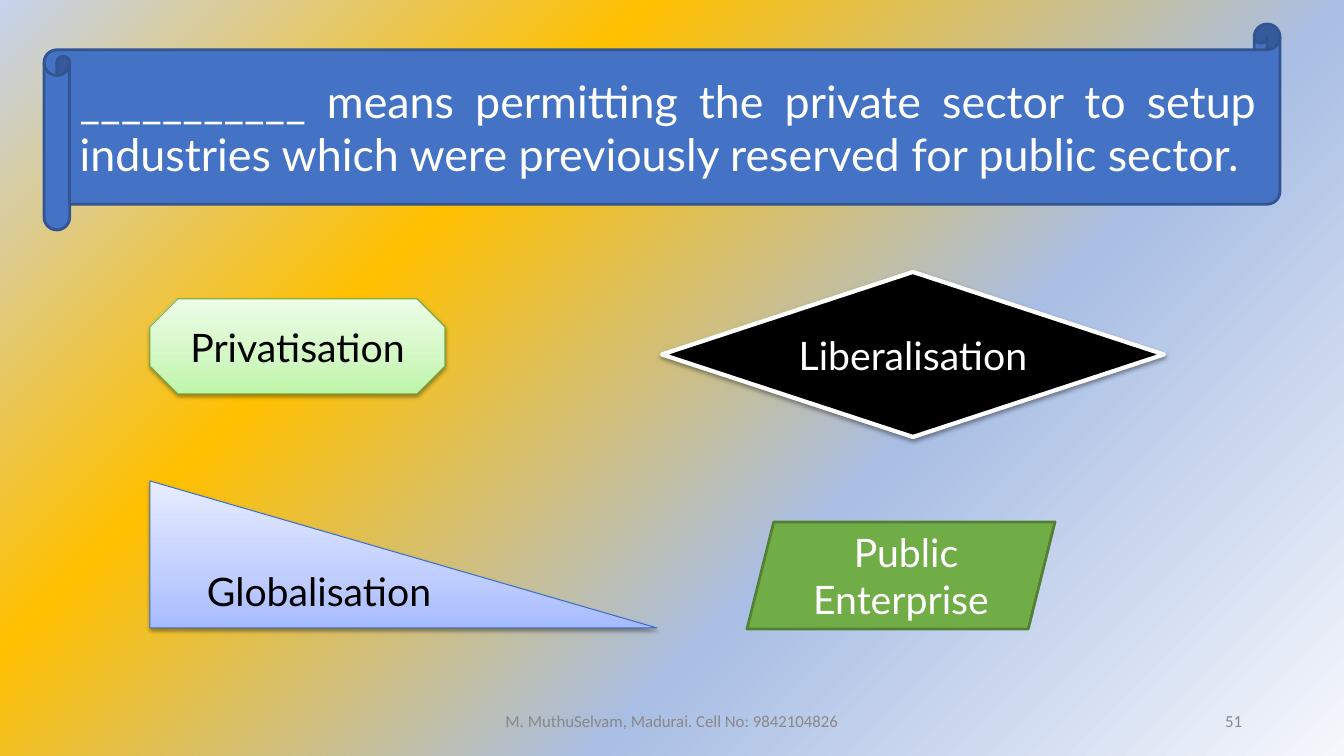
from dataclasses import dataclass

from lxml.etree import SubElement
from pptx import Presentation
from pptx.dml.color import RGBColor
from pptx.enum.shapes import MSO_SHAPE
from pptx.enum.text import MSO_ANCHOR, PP_ALIGN
from pptx.oxml.ns import qn
from pptx.util import Emu, Pt

EMU_PER_PX = 914400 / 100.8


@dataclass(frozen=True)
class Theme:
    heading_font: str = "Lato"
    footer_font: str = "Calibri"
    question_size: int = 32
    answer_size: int = 28
    footer_size: int = 12
    white: str = "FFFFFF"
    black: str = "000000"
    footer_grey: str = "888888"
    blue: str = "4472C4"
    blue_edge: str = "325491"
    green: str = "70AD47"
    green_edge: str = "538035"
    mint_edge: str = "6DAC43"
    lilac_edge: str = "3F6FC3"
    mint: tuple = ((0, "BEF5A7"), (35, "D1F7C2"), (100, "EDFDE7"))
    lilac: tuple = ((0, "A6BBFF"), (35, "C0CEFF"), (100, "E7ECFF"))
    backdrop: tuple = ((0, "F5F7FC"), (36, "A9BEE4"), (69, "FFC000"), (100, "C5D3ED"))


THEME = Theme()


def px(length):
    return Emu(round(length * EMU_PER_PX))


def add_child(parent, tag, **attributes):
    return SubElement(parent, qn(tag), {key: str(value) for key, value in attributes.items()})


def fill_gradient(fill, element, stops):
    fill.gradient()
    gradient = element.find(".//" + qn("a:gradFill"))
    for child in list(gradient):
        gradient.remove(child)
    stop_list = add_child(gradient, "a:gsLst")
    for percent, color in stops:
        stop = add_child(stop_list, "a:gs", pos=percent * 1000)
        add_child(stop, "a:srgbClr", val=color)
    return gradient


def cast_shadow(shape):
    effects = shape.element.find(".//" + qn("a:effectLst"))
    shadow = add_child(effects, "a:outerShdw", blurRad=Pt(3.1), dist=Pt(1.6),
                       dir=5400000, rotWithShape=0)
    color = add_child(shadow, "a:srgbClr", val=THEME.black)
    add_child(color, "a:alpha", val=38000)


def write(shape, text, size, color, font=THEME.heading_font, align=PP_ALIGN.CENTER):
    frame = shape.text_frame
    frame.word_wrap = True
    frame.vertical_anchor = MSO_ANCHOR.MIDDLE
    paragraph = frame.paragraphs[0]
    paragraph.text = text
    paragraph.alignment = align
    paragraph.font.name = font
    paragraph.font.size = Pt(size)
    paragraph.font.color.rgb = RGBColor.from_string(color)


def add_panel(slide, kind, box, fill, edge, edge_width, shadow=False):
    panel = slide.shapes.add_shape(kind, *map(px, box))
    panel.shadow.inherit = False
    if isinstance(fill, str):
        panel.fill.solid()
        panel.fill.fore_color.rgb = RGBColor.from_string(fill)
    else:
        gradient = fill_gradient(panel.fill, panel.element, fill)
        add_child(gradient, "a:lin", ang=16200000, scaled=0)
    panel.line.color.rgb = RGBColor.from_string(edge)
    panel.line.width = Pt(edge_width)
    if shadow:
        cast_shadow(panel)
    return panel


def paint_background(slide):
    gradient = fill_gradient(slide.background.fill, slide.element, THEME.backdrop)
    circle = add_child(gradient, "a:path", path="circle")
    add_child(circle, "a:fillToRect", l=100000, t=100000)


def add_question(slide, box):
    scroll = add_panel(slide, MSO_SHAPE.HORIZONTAL_SCROLL, box, THEME.blue, THEME.blue_edge, 2)
    write(scroll, "___________ means permitting the private sector to setup industries "
          "which were previously reserved for public sector.",
          THEME.question_size, THEME.white, align=PP_ALIGN.JUSTIFY)


def add_answers(slide, box):
    left, top, _, _ = box
    answers = (
        ("Privatisation", MSO_SHAPE.OCTAGON, (0, 27, 295, 95),
         THEME.mint, THEME.mint_edge, 0.75, True, THEME.black),
        ("Liberalisation", MSO_SHAPE.DIAMOND, (512, 0, 502, 165),
         THEME.black, THEME.white, 3, True, THEME.white),
        ("Globalisation", MSO_SHAPE.RIGHT_TRIANGLE, (0, 209, 507, 147),
         THEME.lilac, THEME.lilac_edge, 0.75, True, THEME.black),
        (" Public Enterprise", MSO_SHAPE.PARALLELOGRAM, (597, 250, 308, 107),
         THEME.green, THEME.green_edge, 2, False, THEME.white),
    )
    for text, kind, (x, y, width, height), fill, edge, edge_width, shadow, color in answers:
        answer = add_panel(slide, kind, (left + x, top + y, width, height),
                           fill, edge, edge_width, shadow)
        write(answer, text, THEME.answer_size, color)


def add_footer(slide, box):
    left, top, width, height = box
    number_width = 302
    entries = (
        ("M. MuthuSelvam, Madurai. Cell No: 9842104826", left, 454, PP_ALIGN.CENTER),
        ("51", left + width - number_width, number_width, PP_ALIGN.RIGHT),
    )
    for text, x, entry_width, align in entries:
        entry = slide.shapes.add_textbox(*map(px, (x, top, entry_width, height)))
        write(entry, text, THEME.footer_size, THEME.footer_grey, THEME.footer_font, align)


def main():
    deck = Presentation()
    deck.slide_width, deck.slide_height = px(1344), px(756)
    slide = deck.slides.add_slide(deck.slide_layouts[6])
    paint_background(slide)
    add_question(slide, (44, 24, 1236, 206))
    add_answers(slide, (150, 272, 1014, 357))
    add_footer(slide, (445, 701, 807, 40))
    deck.save("out.pptx")


if __name__ == "__main__":
    main()
